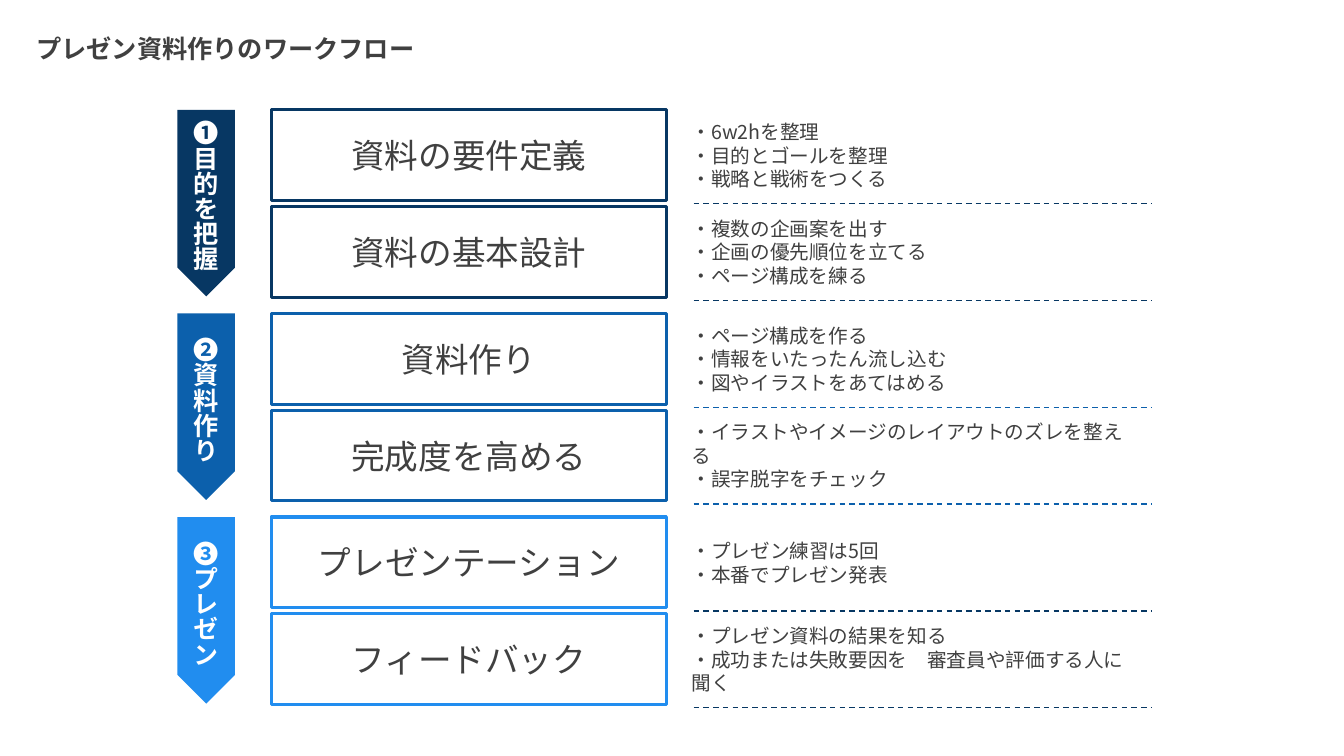
import pptx
import pptx.util
import pptx.dml.color
import pptx.enum.dml
import pptx.enum.shapes
import pptx.enum.text
import pptx.oxml.ns
import lxml.etree

Inches = pptx.util.Inches
Align = pptx.enum.text.PP_ALIGN
Anchor = pptx.enum.text.MSO_ANCHOR
Shape = pptx.enum.shapes.MSO_SHAPE

FONT = "Noto Sans CJK JP"
COLORS = {"navy": "073763", "blue": "0C60AC", "sky": "218DEF",
          "ink": "404040", "white": "FFFFFF"}
WIDE, HIGH = 13.33, 7.5
PITCH = 2.02          # from one stage to the next
ROW, STEP = 0.9, 0.96  # height of a row, and from one row to the next

# name, color, rule color, rows of (task, notes)
STAGES = [
    ("➊目的を把握", "navy", "navy", [
        ("資料の要件定義", ["・6w2hを整理", "・目的とゴールを整理", "・戦略と戦術をつくる"]),
        ("資料の基本設計", ["・複数の企画案を出す", "・企画の優先順位を立てる", "・ページ構成を練る"])]),
    ("❷資料作り", "blue", "blue", [
        ("資料作り", ["・ページ構成を作る", "・情報をいたったん流し込む", "・図やイラストをあてはめる"]),
        ("完成度を高める", ["・イラストやイメージのレイアウトのズレを整える", "・誤字脱字をチェック"])]),
    ("❸プレゼン", "sky", "navy", [
        ("プレゼンテーション", ["・プレゼン練習は5回", "・本番でプレゼン発表"]),
        ("フィードバック", ["・プレゼン資料の結果を知る", "・成功または失敗要因を　審査員や評価する人に聞く"])]),
]


def rgb(name):
    return pptx.dml.color.RGBColor.from_string(COLORS[name])


def place(shape, *box):
    shape.left, shape.top, shape.width, shape.height = map(Inches, box)


def write(shape, lines, size=14, color="ink", bold=False, align=Align.LEFT,
          anchor=Anchor.MIDDLE, spacing=None, wrap=True):
    frame = shape.text_frame
    frame.word_wrap = wrap
    frame.auto_size = pptx.enum.text.MSO_AUTO_SIZE.NONE
    frame.vertical_anchor = anchor
    frame.text = "\n".join(lines)
    for para in frame.paragraphs:
        para.alignment = align
        if spacing:
            para.line_spacing = spacing
        for run in para.runs:
            font = run.font
            font.size, font.bold, font.name = pptx.util.Pt(size), bold, FONT
            font.color.rgb = rgb(color)
            east = lxml.etree.SubElement(font._element, pptx.oxml.ns.qn("a:ea"))
            east.set("typeface", FONT)


def text(slide, box, lines, **look):
    shape = slide.shapes.add_textbox(*map(Inches, box))
    write(shape, lines, **look)
    return shape


def arrow(slide, x, y, wide, high, name, color):
    """Downward stage marker with its name set vertically."""
    shape = slide.shapes.add_shape(Shape.PENTAGON, 0, 0, 0, 0)
    place(shape, x + (wide - high) / 2, y + (high - wide) / 2, high, wide)
    shape.rotation = 90
    shape.shadow.inherit = False
    shape.fill.solid()
    shape.fill.fore_color.rgb = rgb(color)
    shape.line.fill.background()
    length = 0.06 + 0.26 * len(name)
    label = text(slide, (x + 0.03, y + 0.82 - length / 2, 0.5, length), [name],
                 size=18, color="white", bold=True, align=Align.CENTER, wrap=False)
    label.text_frame._txBody.bodyPr.set("vert", "eaVert")


def rule(slide, x, y, wide, color):
    line = slide.shapes.add_connector(
        pptx.enum.shapes.MSO_CONNECTOR.STRAIGHT,
        Inches(x), Inches(y), Inches(x + wide), Inches(y))
    line.line.color.rgb = rgb(color)
    line.line.width = pptx.util.Pt(1)
    line.line.dash_style = pptx.enum.dml.MSO_LINE.DASH
    lxml.etree.SubElement(line._element.spPr, pptx.oxml.ns.qn("a:effectLst"))


def row(slide, x, y, task, notes, color, tint):
    card = slide.shapes.add_shape(Shape.RECTANGLE, 0, 0, 0, 0)
    place(card, x, y, 3.92, ROW)
    card.shadow.inherit = False
    card.fill.background()
    card.line.color.rgb = rgb(color)
    card.line.width = pptx.util.Pt(2.25)
    write(card, [task], size=24, align=Align.CENTER)
    text(slide, (x + 4.07, y, 4.65, ROW), notes)
    rule(slide, x + 4.19, y + ROW + 0.03, 4.55, tint)


def stage(slide, x, y, name, color, tint, rows):
    arrow(slide, x, y, 0.57, 1.85, name, color)
    for i, (task, notes) in enumerate(rows):
        row(slide, x + 0.93, y + i * STEP, task, notes, color, tint)


def main():
    deck = pptx.Presentation()
    deck.slide_width, deck.slide_height = Inches(WIDE), Inches(HIGH)
    slide = deck.slides.add_slide(deck.slide_layouts.get_by_name("Title Only"))
    title = slide.shapes.title
    place(title, 0.26, 0.25, 4.04, 0.43)
    write(title, ["プレゼン資料作りのワークフロー"], size=18, bold=True,
          anchor=Anchor.BOTTOM, spacing=0.9)
    for i, parts in enumerate(STAGES):
        stage(slide, 1.76, 1.09 + i * PITCH, *parts)
    deck.save("out.pptx")


if __name__ == "__main__":
    main()
